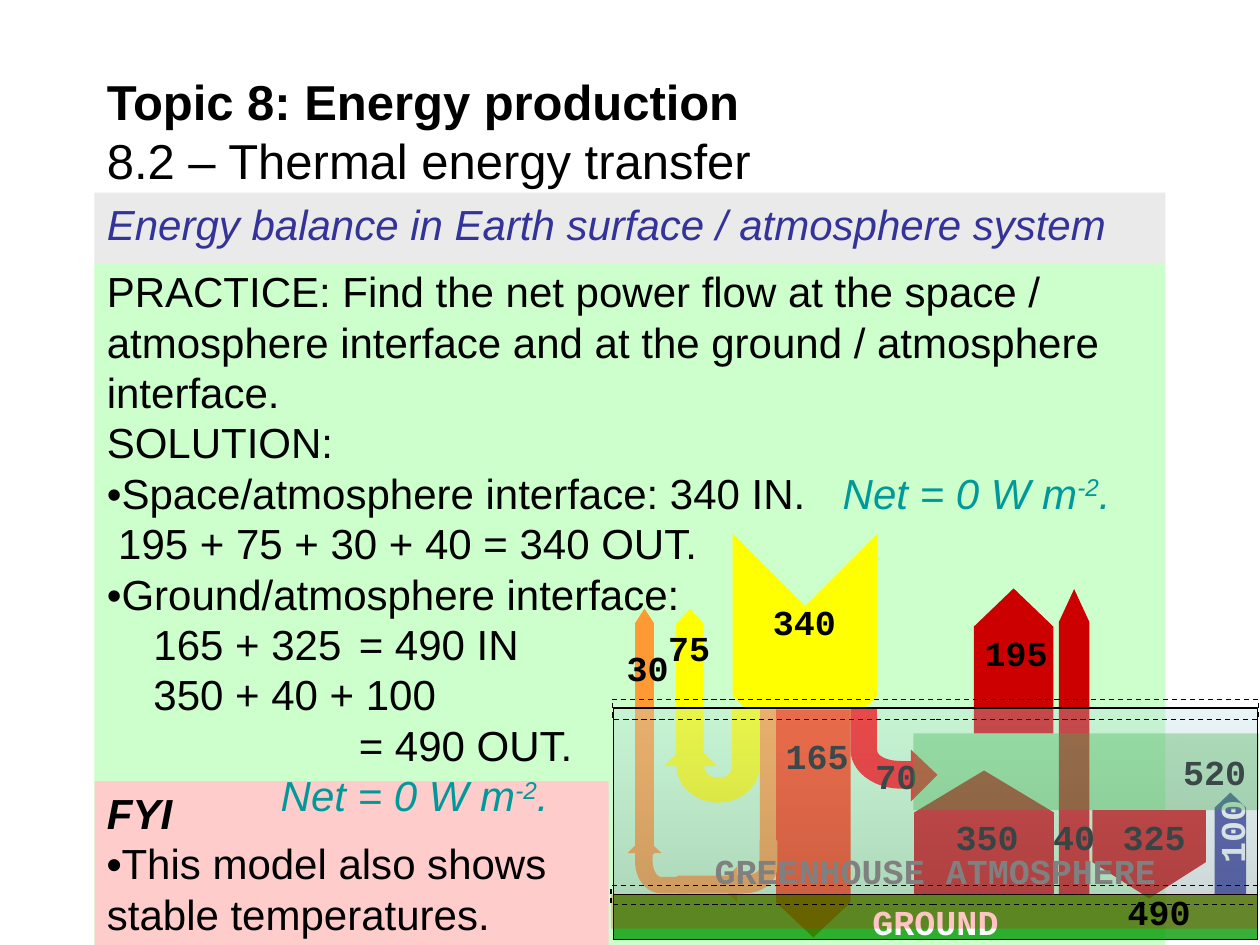
import pptx
import pptx.dml.color
import pptx.enum.dml
import pptx.enum.shapes
import pptx.enum.text
import pptx.oxml.ns
import pptx.util
import lxml.etree

Inches = pptx.util.Inches
Kind = pptx.enum.shapes.MSO_SHAPE
Align = pptx.enum.text.PP_ALIGN
Anchor = pptx.enum.text.MSO_ANCHOR
qn = pptx.oxml.ns.qn


def paint(fill, color, opacity=100):
    fill.solid()
    fill.fore_color.rgb = pptx.dml.color.RGBColor.from_string(color)
    if opacity < 100:
        tint = fill._xPr.find(qn("a:solidFill"))[0]
        lxml.etree.SubElement(tint, qn("a:alpha"), val=str(opacity * 1000))


def write(box, lines, color="000000", size=24, face="Arial", align=Align.LEFT, anchor=Anchor.TOP):
    frame = box.text_frame
    frame.word_wrap = True
    frame.vertical_anchor = anchor
    for number, line in enumerate(lines):
        para = frame.add_paragraph() if number else frame.paragraphs[0]
        para.alignment = align
        for text, style in line:
            span = para.add_run()
            span.text = text
            span.font.name = face
            span.font.size = pptx.util.Pt(size)
            span.font.bold = "b" in style
            span.font.italic = "i" in style
            paint(span.font.fill, color)
            if "^" in style:
                span._r.get_or_add_rPr().set("baseline", "30000")


deck = pptx.Presentation()
deck.slide_width, deck.slide_height = Inches(10), Inches(7.5)
page = deck.slides.add_slide(deck.slide_layouts[6])

practice = [
    "PRACTICE: Find the net power flow at the space / atmosphere interface"
    " and at the ground / atmosphere interface.",
    "SOLUTION:",
    "•Space/atmosphere interface: 340 IN.",
    "195 + 75 + 30 + 40 = 340 OUT.",
    "•Ground/atmosphere interface:",
    "165 + 325\t= 490 IN",
    "350 + 40 + 100",
    "= 490 OUT.",
]
panel = page.shapes.add_shape(Kind.RECTANGLE, Inches(0.75), Inches(2.06), Inches(8.5), Inches(5.44))
panel.shadow.inherit = False
paint(panel.fill, "CCFFCC")
panel.line.fill.background()
write(panel, [[(text, "")] for text in practice])
for number, indent in ((3, 0.09), (5, 0.37), (6, 0.37), (7, 2)):
    props = panel.text_frame.paragraphs[number]._p.get_or_add_pPr()
    props.set("marL", "0")
    props.set("indent", str(Inches(indent)))
    if number == 5:
        tabs = lxml.etree.SubElement(props, qn("a:tabLst"))
        lxml.etree.SubElement(tabs, qn("a:tab"), pos=str(Inches(2)), algn="l")

title = page.shapes.add_textbox(Inches(0.75), Inches(0.58), Inches(8.5), Inches(0.91))
write(title, [[("Topic 8: Energy production", "b")], [("8.2 – Thermal energy transfer", "")]],
      size=28, anchor=Anchor.MIDDLE)

diagram = page.shapes.add_group_shape()
arrows = [
    (Kind.CHEVRON, 5.46, 4.59, 1.86, 1.15, 90, 0.5, "FFFF00"),
    (Kind.PENTAGON, 5.44, 6.22, 1.32, 0.14, 90, 0.75, "FF9933"),
    (Kind.PENTAGON, 5.28, 6.95, 0.62, 0.14, 180, 0.73, "FF9933"),
    (Kind.CHEVRON, 4.9, 5.3, 1.15, 0.22, 270, 0.52, "FFFF00"),
    (Kind.PENTAGON, 4.14, 5.73, 1.95, 0.15, 270, 0.77, "FF9933"),
    (Kind.PENTAGON, 5.55, 6.24, 1.81, 0.59, 90, 0.47, "FF3300"),
    (Kind.PENTAGON, 7.47, 4.93, 1.15, 0.63, 270, 0.48, "CC0000"),
    (Kind.PENTAGON, 7.32, 6.05, 0.98, 1.11, 270, 0.34, "CC0000"),
    (Kind.PENTAGON, 7.31, 5.77, 2.43, 0.24, 270, 1.08, "CC0000"),
    (Kind.PENTAGON, 8.77, 6.33, 0.7, 0.9, 90, 0.41, "CC0000"),
    (Kind.PENTAGON, 9.36, 6.57, 0.81, 0.25, 270, 0.48, "333399"),
]
for kind, left, top, width, height, turn, point, color in arrows:
    arrow = diagram.shapes.add_shape(kind, Inches(left), Inches(top), Inches(width), Inches(height))
    arrow.adjustments[0] = point
    arrow.rotation = turn
    arrow.shadow.inherit = False
    paint(arrow.fill, color)
    arrow.line.fill.background()

bends = [
    ("FFFF00", [(5.48, 5.87), (5.27, 6.08), (5.37, 6.08), (5.37, 6.24, 5.52, 6.37, 5.7, 6.37),
                (5.88, 6.37, 6.03, 6.24, 6.03, 6.08), (6.03, 5.62), (5.81, 5.62), (5.81, 6.08),
                (5.81, 6.13, 5.77, 6.17, 5.72, 6.17), (5.69, 6.17),
                (5.63, 6.17, 5.59, 6.13, 5.59, 6.08), (5.69, 6.08)]),
    ("FF9933", [(5.71, 7.02), (5.85, 7.16), (5.85, 7.09), (5.91, 7.09),
                (6.05, 7.09, 6.17, 7, 6.17, 6.88), (6.17, 6.67), (6.03, 6.67), (6.03, 6.88),
                (6.03, 6.92, 5.97, 6.95, 5.91, 6.95), (5.85, 6.95), (5.85, 6.88)]),
    ("FF9933", [(5.11, 6.64), (4.98, 6.77), (5.04, 6.77), (5.04, 6.83),
                (5.04, 6.98, 5.13, 7.09, 5.25, 7.09), (5.46, 7.09), (5.46, 6.96), (5.25, 6.96),
                (5.21, 6.96, 5.18, 6.9, 5.18, 6.83), (5.18, 6.77), (5.25, 6.77)]),
    ("FF0000", [(7.44, 6.15), (7.23, 6.36), (7.23, 6.26), (7.15, 6.26),
                (6.93, 6.26, 6.75, 6.12, 6.75, 5.95), (6.75, 5.62), (6.96, 5.62), (6.96, 5.95),
                (6.96, 6, 7.04, 6.04, 7.15, 6.04), (7.23, 6.04), (7.23, 5.95)]),
]
for color, steps in bends:
    points = [steps[0]]
    for step in steps[1:]:
        if len(step) == 2:
            points.append(step)
            continue
        corners = [points[-1], step[:2], step[2:4], step[4:]]
        for part in range(1, 13):
            t = part / 12
            weights = ((1 - t) ** 3, 3 * t * (1 - t) ** 2, 3 * t * t * (1 - t), t ** 3)
            points.append(tuple(sum(w * c[axis] for w, c in zip(weights, corners)) for axis in (0, 1)))
    places = [(Inches(x), Inches(y)) for x, y in points]
    outline = diagram.shapes.build_freeform(*places[0], scale=1.0)
    outline.add_line_segments(places[1:], close=True)
    bend = outline.convert_to_shape()
    bend.shadow.inherit = False
    paint(bend.fill, color)
    bend.line.fill.background()

labels = [
    ("340", 5.81, 4.72, 1.15, 0, "000000"),
    ("75", 5.11, 4.92, 0.72, 0, "000000"),
    ("30", 4.85, 5.08, 0.58, 0, "000000"),
    ("165", 6.04, 5.78, 0.89, 0, "000000"),
    ("195", 7.57, 4.96, 0.99, 0, "000000"),
    ("70", 6.83, 5.94, 0.57, 0, "000000"),
    ("350", 6.97, 6.42, 1.73, 0, "000000"),
    ("40", 8.24, 6.42, 0.57, 0, "000000"),
    ("325", 8.5, 6.42, 1.32, 0, "000000"),
    ("100", 9.42, 6.39, 0.7, 270, "FFFFFF"),
    ("GROUND", 4.87, 7.1, 5.11, 0, "FFFFFF"),
    ("GREENHOUSE ATMOSPHERE", 4.87, 6.69, 5.11, 0, "808080"),
]
layers = [
    ("520", 7.25, 5.82, 2.74, 0.61, "009900", 34, False),
    ("", 4.87, 7.1, 5.11, 0.36, "009900", 78, True),
    ("", 4.87, 5.62, 5.11, 1.48, "", 100, True),
    ("490", 4.85, 7.1, 5.13, 0.27, "FF0000", 23, False),
]
for item in labels[:10] + layers[:3] + labels[10:] + layers[3:]:
    if item in labels:
        text, left, top, width, turn, color = item
        label = diagram.shapes.add_textbox(Inches(left), Inches(top), Inches(width), Inches(0.43))
        label.rotation = turn
        write(label, [[(text, "b")]], color, 20, "Courier New", Align.CENTER)
        continue
    text, left, top, width, height, color, opacity, edged = item
    layer = diagram.shapes.add_shape(Kind.RECTANGLE, Inches(left), Inches(top), Inches(width), Inches(height))
    layer.shadow.inherit = False
    if color:
        paint(layer.fill, color, opacity)
    else:
        layer.fill.gradient()
        layer.fill.gradient_angle = 270
        for stop, shade, strength in zip(layer.fill.gradient_stops, ("BBE0E3", "86A0A2"), (33, 41)):
            stop.color.rgb = pptx.dml.color.RGBColor.from_string(shade)
            tint = stop._gs.find(qn("a:srgbClr"))
            lxml.etree.SubElement(tint, qn("a:alpha"), val=str(strength * 1000))
    if edged:
        paint(layer.line.fill, "000000")
        layer.line.width = pptx.util.Pt(0.75)
    else:
        layer.line.fill.background()
    if text:
        write(layer, [[(text, "b")]], "000000", 20, "Courier New", Align.RIGHT, Anchor.MIDDLE)
        layer.text_frame.margin_right = Inches(0.53 if text == "490" else 0.1)

for left, top, height in ((4.86, 5.55, 0.16), (4.85, 7.03, 0.15)):
    border = page.shapes.add_shape(Kind.RECTANGLE, Inches(left), Inches(top), Inches(5.13), Inches(height))
    border.shadow.inherit = False
    border.fill.background()
    paint(border.line.fill, "000000")
    border.line.width = pptx.util.Pt(0.75)
    border.line.dash_style = pptx.enum.dml.MSO_LINE.DASH

net = [[("Net = 0 W m", "i"), ("-2", "i^"), (".", "i")]]
notes = [
    (0.75, 1.53, 8.5, 0.56, "EAEAEA", "333399",
     [[("Energy balance in Earth surface / atmosphere system", "i")]]),
    (6.59, 3.66, 2.64, 0.5, "", "009999", net),
    (0.75, 6.2, 4.08, 1.3, "FFCCCC", "000000",
     [[("FYI", "bi")], [("•", "b"), ("This model also shows stable temperatures.", "")]]),
    (2.13, 6.06, 2.64, 0.5, "", "009999", net),
]
for left, top, width, height, color, ink, lines in notes:
    area = Inches(left), Inches(top), Inches(width), Inches(height)
    if color:
        note = page.shapes.add_shape(Kind.RECTANGLE, *area)
        note.shadow.inherit = False
        paint(note.fill, color)
        note.line.fill.background()
    else:
        note = page.shapes.add_textbox(*area)
    write(note, lines, ink)

deck.save("out.pptx")
